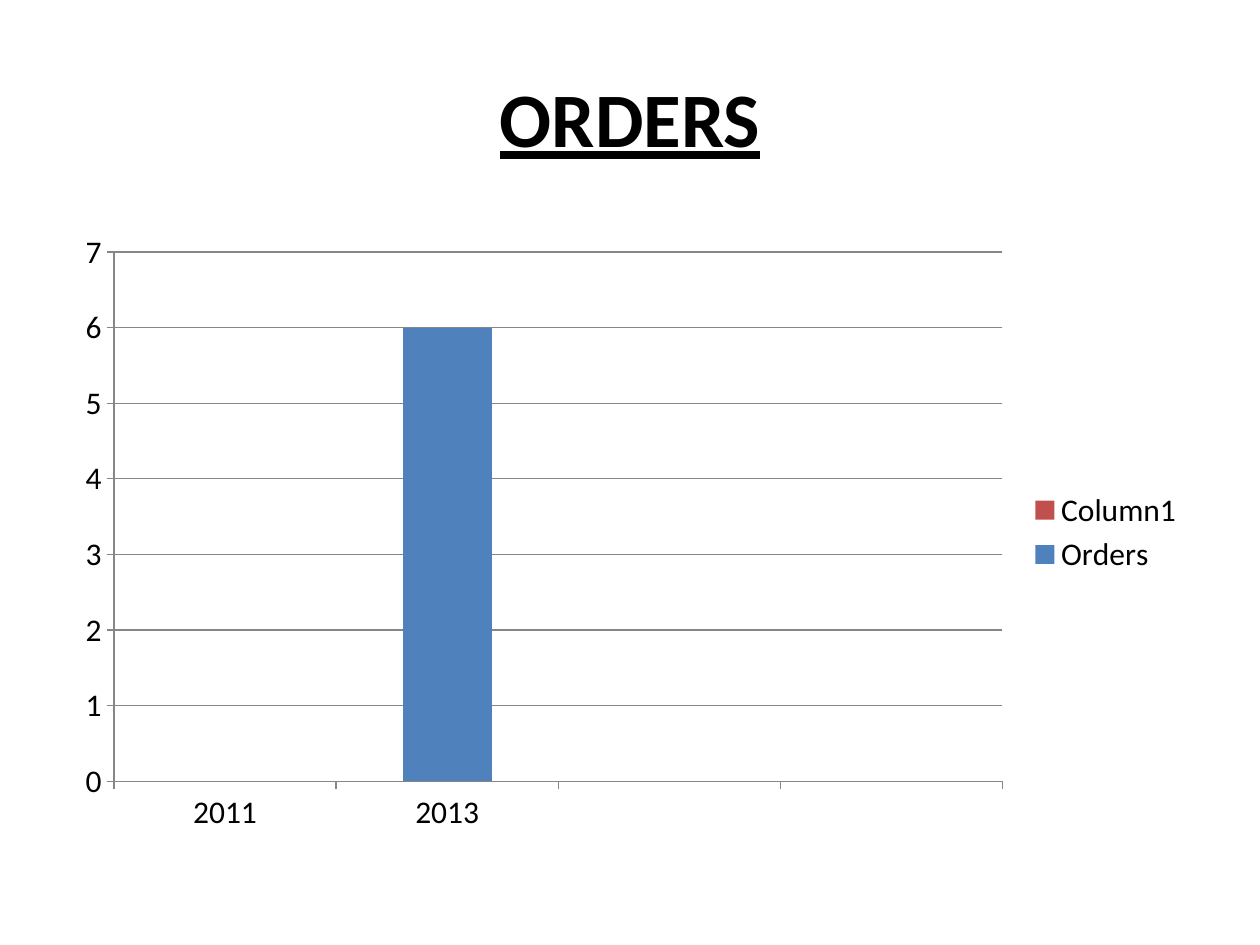
from pptx import Presentation
from pptx.chart.data import CategoryChartData
from pptx.dml.color import RGBColor
from pptx.enum.chart import XL_CHART_TYPE as CT, XL_LEGEND_POSITION as LP, XL_TICK_MARK as TM
from pptx.enum.text import MSO_ANCHOR, PP_ALIGN
from pptx.util import Inches, Pt


def rgb(value):
    return RGBColor.from_string(value)


def set_font(font, size):
    font.name = "Calibri"
    font.size = Pt(size)
    font.color.rgb = rgb("000000")


prs = Presentation()
prs.slide_width, prs.slide_height = Inches(10), Inches(7.5)
s = prs.slides.add_slide(prs.slide_layouts[5])

title = s.shapes.title
title.left, title.top = Inches(0.5), Inches(0.3)
title.width, title.height = Inches(9), Inches(1.25)
tf = title.text_frame
tf.text = "ORDERS"
tf.vertical_anchor = MSO_ANCHOR.MIDDLE
p = tf.paragraphs[0]
p.alignment = PP_ALIGN.CENTER
set_font(p.font, 44)
p.font.bold = True
p.font.underline = True

data = CategoryChartData()
data.categories = ["2011", "2013", "", ""]
data.add_series("Orders", [0, 6, None, None])
data.add_series("Column1", [None] * 4)
chart = s.shapes.add_chart(CT.COLUMN_STACKED, Inches(0.5), Inches(1.75),
                           Inches(9), Inches(4.95), data).chart
set_font(chart.font, 18)
chart.has_title = False
chart.has_legend = True
chart.legend.position = LP.RIGHT
chart.legend.include_in_layout = False

plot = chart.plots[0]
plot.vary_by_categories = False
plot.gap_width, plot.overlap = 150, 100
for series, color in zip(plot.series, ["4F81BD", "C0504D"]):
    series.format.fill.solid()
    series.format.fill.fore_color.rgb = rgb(color)

chart.value_axis.has_major_gridlines = True
lines = [chart.value_axis.major_gridlines.format.line]
for axis in (chart.category_axis, chart.value_axis):
    axis.major_tick_mark = TM.OUTSIDE
    axis.minor_tick_mark = TM.NONE
    lines.append(axis.format.line)
for line in lines:
    line.color.rgb = rgb("868686")
    line.width = Pt(0.75)

prs.save("out.pptx")
